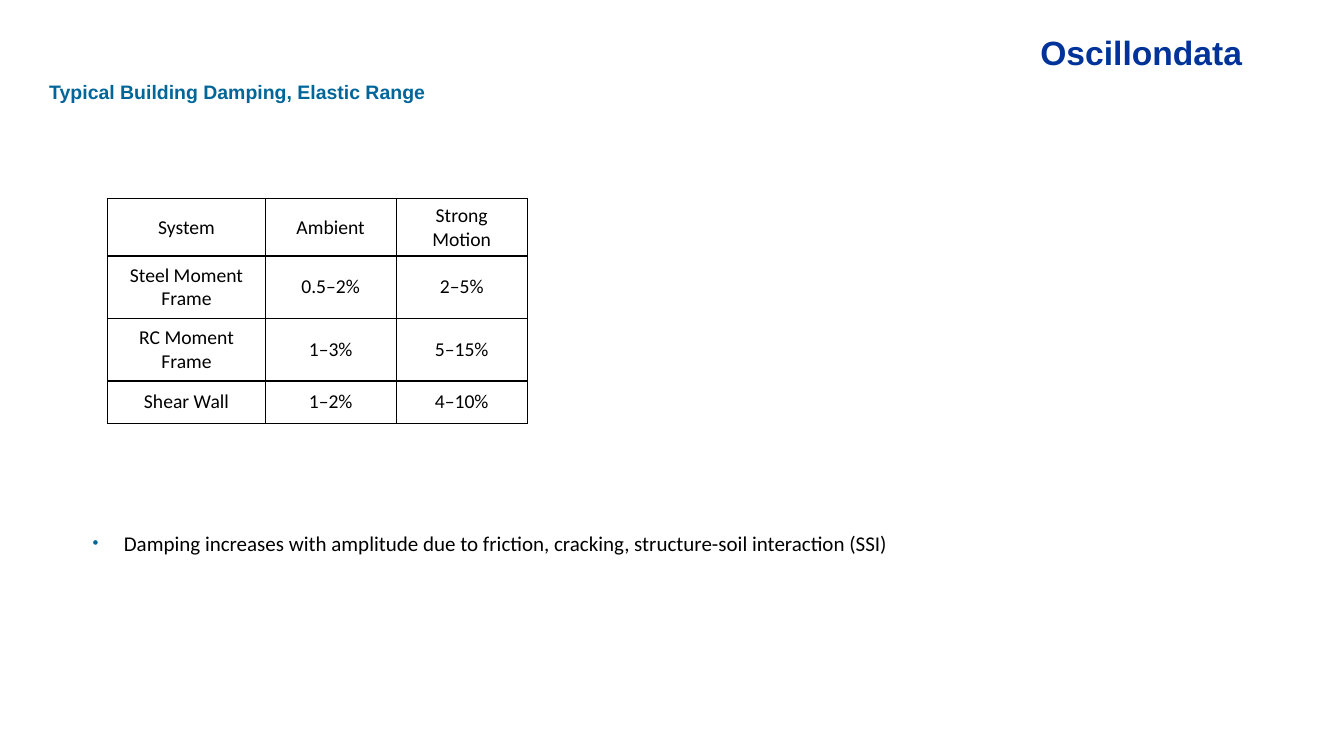
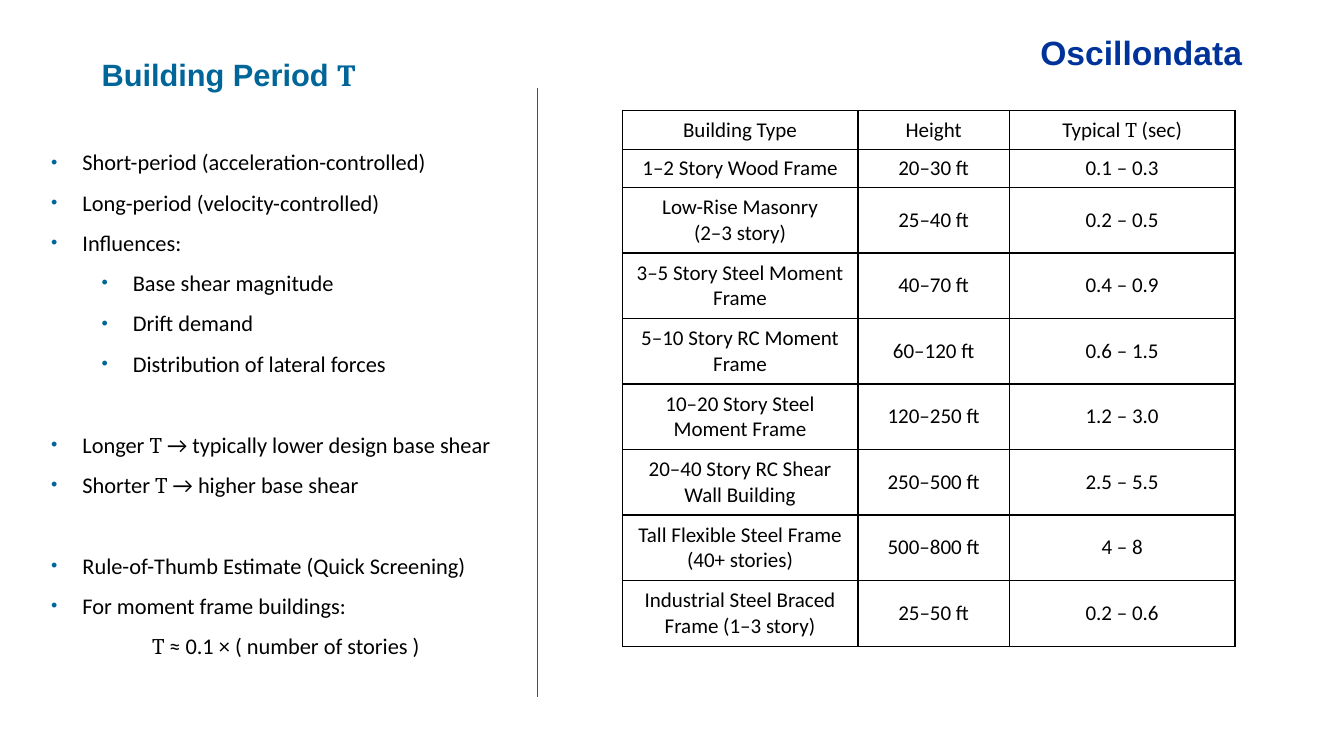
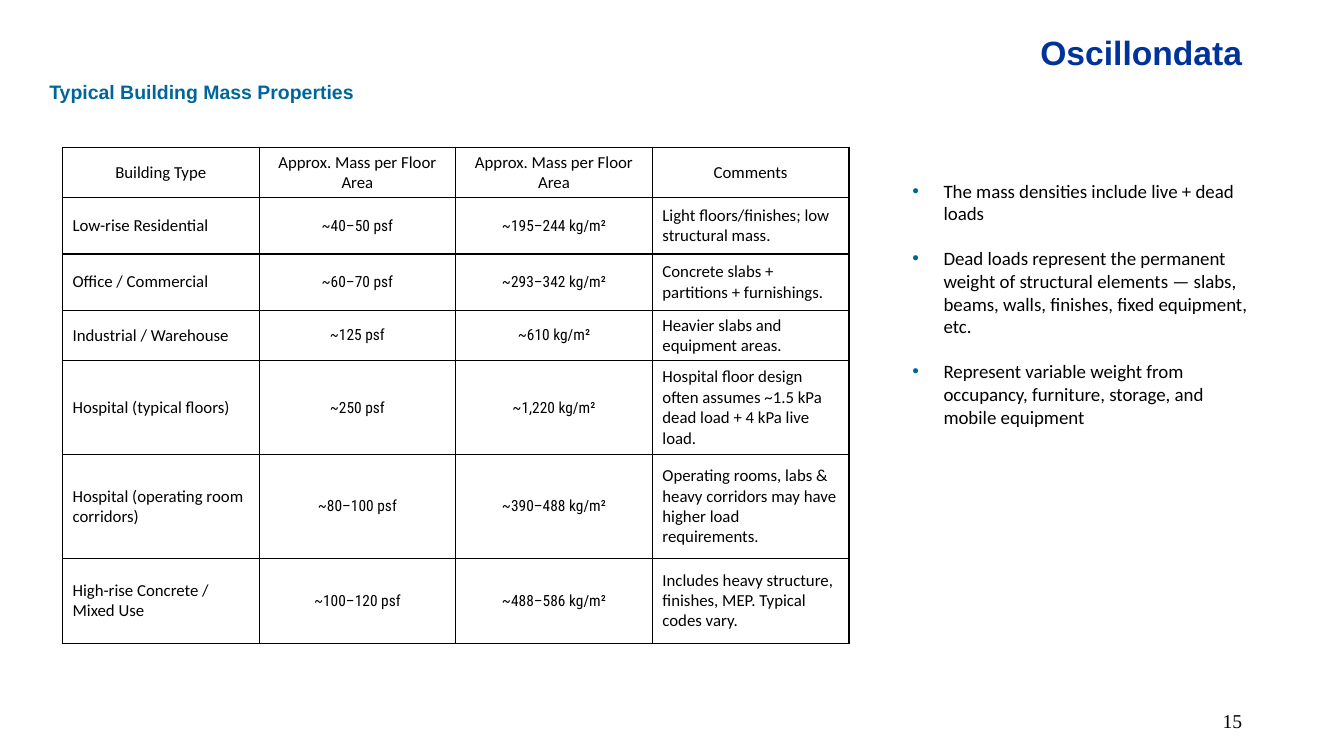
from lxml import etree
from pptx import Presentation
from pptx import util as u
from pptx.dml.color import RGBColor
from pptx.enum import shapes, text
from pptx.oxml import ns

PX = 9144  # a hundredth of an inch
NAVY = RGBColor(0x00, 0x33, 0x99)
TEAL = RGBColor(0x00, 0x66, 0x99)
RULE = RGBColor(0x15, 0x60, 0x82)
BLACK = RGBColor(0, 0, 0)
HEAD, BODY, MATH = "Arial", "Calibri", "Cambria"
LEFT, MID, RIGHT = text.PP_ALIGN.LEFT, text.PP_ALIGN.CENTER, text.PP_ALIGN.RIGHT
HANG = 31


def px(*vals):
    return [u.Emu(v * PX) for v in vals]


def sub(node, tag, **attrs):
    return etree.SubElement(node, ns.qn(tag), attrs)


def tint(node, color):
    sub(node, "a:srgbClr", val=str(color))


def write(par, words, size, face=BODY, color=BLACK, bold=False, align=LEFT):
    """Fill a paragraph; words between asterisks take the math face."""
    par.alignment = align
    font = par.font
    font.size, font.name, font.bold = u.Pt(size), face, bold
    font.color.rgb = color
    for i, part in enumerate(words.split("*")):
        for j, line in enumerate(part.split("\n")):
            if j:
                par.add_line_break()
            if line:
                run = par.add_run()
                run.text = line
                if i % 2:
                    run.font.name = MATH


def indent(par, left, mark, scale):
    ppr = par._p.get_or_add_pPr()
    ppr.set("marL", str(left * PX))
    if mark:
        ppr.set("indent", str(-HANG * PX))
        tint(sub(ppr, "a:buClr"), TEAL)
        sub(ppr, "a:buSzPct", val=str(scale * 1000))
        sub(ppr, "a:buFont", typeface="Arial")
        sub(ppr, "a:buChar", char="•")


def border(cell):
    tcpr = cell._tc.get_or_add_tcPr()
    for side in "LRTB":
        line = sub(tcpr, "a:ln" + side, w=str(u.Pt(1)))
        tint(sub(line, "a:solidFill"), BLACK)


class Deck:
    def __init__(self):
        self.prs = Presentation()
        self.prs.slide_width, self.prs.slide_height = px(1333, 750)
        self.slide = None

    def page(self):
        self.slide = self.prs.slides.add_slide(self.prs.slide_layouts[6])
        self.label(1022, 27, 235, 50, "Oscillondata", 24, HEAD, NAVY, True)

    def frame(self, x, y, w, h, wrap=True):
        box = self.slide.shapes.add_textbox(*px(x, y, w, h)).text_frame
        box.word_wrap = wrap
        box.auto_size = text.MSO_AUTO_SIZE.SHAPE_TO_FIT_TEXT
        return box

    def label(self, x, y, w, h, *style):
        par = self.frame(x, y, w, h, False).paragraphs[0]
        write(par, *style)
        return par

    def title(self, w, words):
        """Lowered heading, drawn as a subscript."""
        par = self.label(39, 52, w, 37, words, 24, HEAD, TEAL, True)
        par.runs[0]._r.get_or_add_rPr().set("baseline", "-25000")

    def number(self, words):
        par = self.frame(942, 698, 300, 34).paragraphs[0]
        write(par, words, 14, "Times New Roman", align=RIGHT)

    def bullets(self, x, y, w, h, size, groups, lines=1.0, scale=100, gap=0):
        """Groups hold words, or (left, mark, words) for other indents."""
        box = self.frame(x, y, w, h)
        par = None
        for group in groups:
            for i, item in enumerate(group):
                left, mark, words = (HANG, True, item) if isinstance(item, str) else item
                first = par is None
                par = box.paragraphs[0] if first else box.add_paragraph()
                indent(par, left, mark, scale)
                par.line_spacing = lines
                par.space_before = u.Pt(gap if i == 0 and not first else 0)
                write(par, words, size)

    def rule(self, x, top, end):
        line = self.slide.shapes.add_connector(
            shapes.MSO_CONNECTOR.STRAIGHT, *px(x, top, x, end))
        line.line.color.rgb = RULE
        line.line.width = u.Pt(0.75)
        sub(line._element.spPr, "a:effectLst")

    def table(self, x, y, cols, highs, rows, size, styles=None):
        """Body cells follow the style of their column; others are centred."""
        shape = self.slide.shapes.add_table(
            len(rows), len(cols), *px(x, y, sum(cols), sum(highs)))
        grid = shape.table
        grid.first_row = grid.horz_banding = False
        for col, wide in zip(grid.columns, px(*cols)):
            col.width = wide
        for row, high in zip(grid.rows, px(*highs)):
            row.height = high
        for r, row in enumerate(rows):
            for c, words in enumerate(row):
                cell = grid.cell(r, c)
                border(cell)
                cell.fill.background()
                cell.vertical_anchor = text.MSO_ANCHOR.MIDDLE
                style = {"size": size, "align": MID}
                if r and styles:
                    style.update(styles[c])
                write(cell.text_frame.paragraphs[0], words, **style)


def damping(deck):
    deck.page()
    deck.title(454, "Typical Building Damping, Elastic Range")
    deck.table(107, 197, [156, 130, 130], [57, 62, 62, 42], [
        ("System", "Ambient", "Strong Motion"),
        ("Steel Moment Frame", "0.5–2%", "2–5%"),
        ("RC Moment Frame", "1–3%", "5–15%"),
        ("Shear Wall", "1–2%", "4–10%"),
    ], 14)
    deck.bullets(82, 521, 885, 66, 15, [[
        "Damping increases with amplitude due to friction, cracking, "
        "structure-soil interaction (SSI)"]], scale=80)


def period(deck):
    deck.page()
    deck.label(91, 50, 276, 47, "Building Period *T*", 22, HEAD, TEAL, True)
    deck.bullets(41, 129, 474, 571, 16, [
        ["Short-period (acceleration-controlled)",
         "Long-period (velocity-controlled)",
         "Influences:",
         (81, True, "Base shear magnitude"),
         (81, True, "Drift demand"),
         (81, True, "Distribution of lateral forces")],
        ["Longer *T* → typically lower design base shear",
         "Shorter *T* → higher base shear"],
        ["Rule-of-Thumb Estimate (Quick Screening)",
         "For moment frame buildings:",
         (100, False, "*T *≈ 0.1 × ( number of stories )")],
    ], lines=1.5, scale=80, gap=29)
    deck.rule(533, 87, 691)
    deck.table(617, 110, [234, 150, 224], [38] * 2 + [65] * 7, [
        ("Building Type", "Height", "Typical *T *(sec)"),
        ("1–2 Story Wood Frame", "20–30 ft", "0.1 – 0.3"),
        ("Low-Rise Masonry\n(2–3 story)", "25–40 ft", "0.2 – 0.5"),
        ("3–5 Story Steel Moment Frame", "40–70 ft", "0.4 – 0.9"),
        ("5–10 Story RC Moment Frame", "60–120 ft", "0.6 – 1.5"),
        ("10–20 Story Steel Moment Frame", "120–250 ft", "1.2 – 3.0"),
        ("20–40 Story RC Shear Wall Building", "250–500 ft", "2.5 – 5.5"),
        ("Tall Flexible Steel Frame (40+ stories)", "500–800 ft", "4 – 8"),
        ("Industrial Steel Braced Frame (1–3 story)", "25–50 ft", "0.2 – 0.6"),
    ], 15)


def mass(deck):
    deck.page()
    deck.number("15")
    deck.title(372, "Typical Building Mass Properties")
    note = {"align": LEFT}
    value = {"size": 11, "face": "Roboto Condensed"}
    deck.table(62, 146, [195] * 4, [49, 56, 56, 50, 93, 103, 84], [
        ("Building Type", "Approx. Mass per Floor Area",
         "Approx. Mass per Floor Area", "Comments"),
        ("Low-rise Residential", "~40–50 psf", "~195–244 kg/m²",
         "Light floors/finishes; low structural mass."),
        ("Office / Commercial", "~60–70 psf", "~293–342 kg/m²",
         "Concrete slabs + partitions + furnishings."),
        ("Industrial / Warehouse", "~125 psf", "~610 kg/m²",
         "Heavier slabs and equipment areas."),
        ("Hospital (typical floors)", "~250 psf", "~1,220 kg/m²",
         "Hospital floor design often assumes ~1.5 kPa dead load + 4 kPa live load."),
        ("Hospital (operating room corridors)", "~80–100 psf", "~390–488 kg/m²",
         "Operating rooms, labs & heavy corridors may have higher load requirements."),
        ("High-rise Concrete / Mixed Use", "~100–120 psf", "~488–586 kg/m²",
         "Includes heavy structure, finishes, MEP. Typical codes vary."),
    ], 12, [note, value, value, note])
    deck.bullets(895, 173, 361, 260, 13.5, [
        ["The mass densities include live + dead loads"],
        ["Dead loads represent the permanent weight of structural elements "
         "— slabs, beams, walls, finishes, fixed equipment, etc."],
        ["Represent variable weight from occupancy, furniture, storage, "
         "and mobile equipment"],
    ], gap=16)


def main():
    deck = Deck()
    for build in (damping, period, mass):
        build(deck)
    deck.prs.save("out.pptx")


if __name__ == "__main__":
    main()
